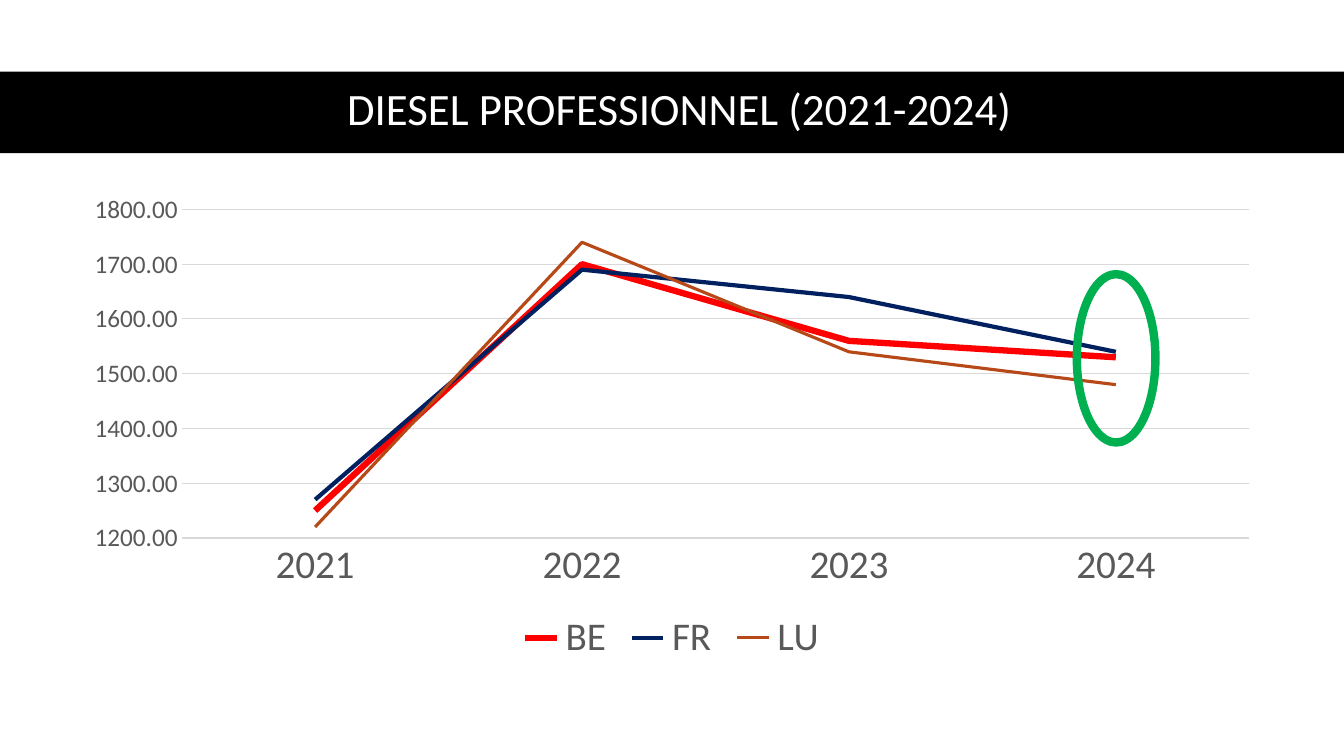
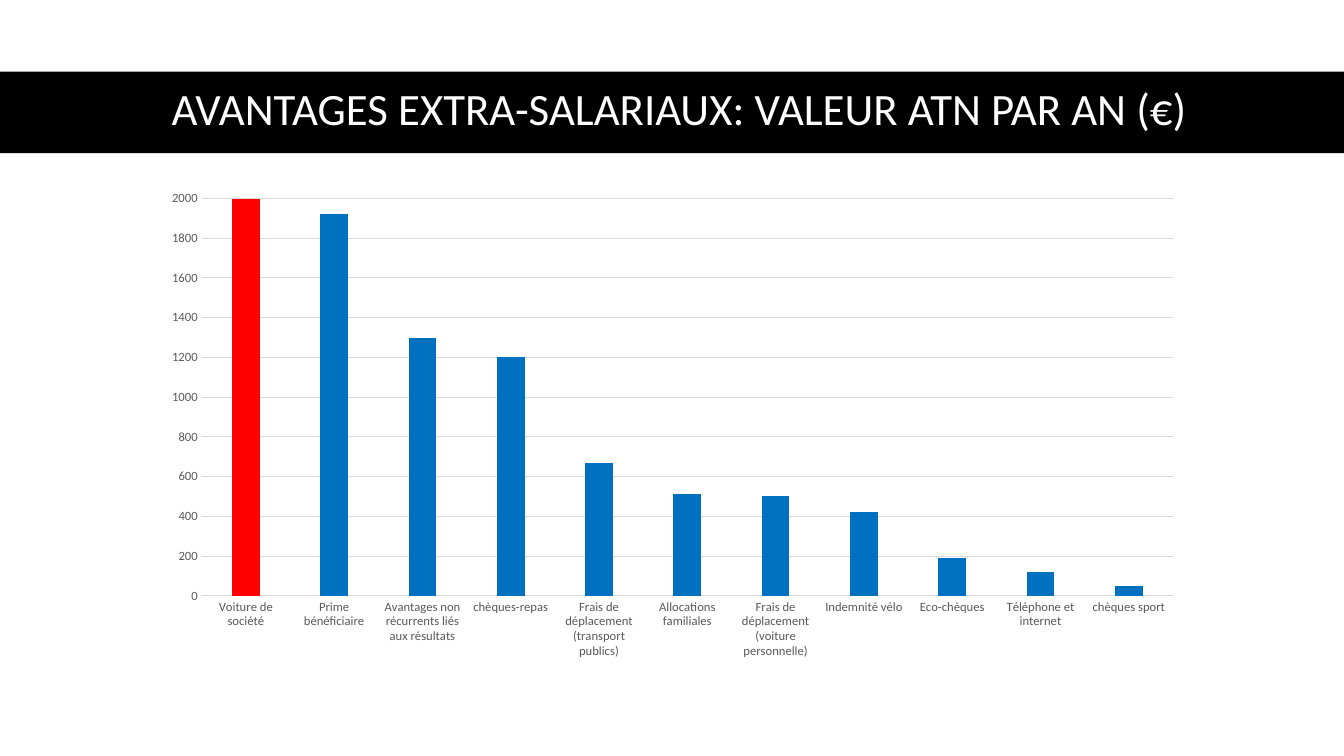
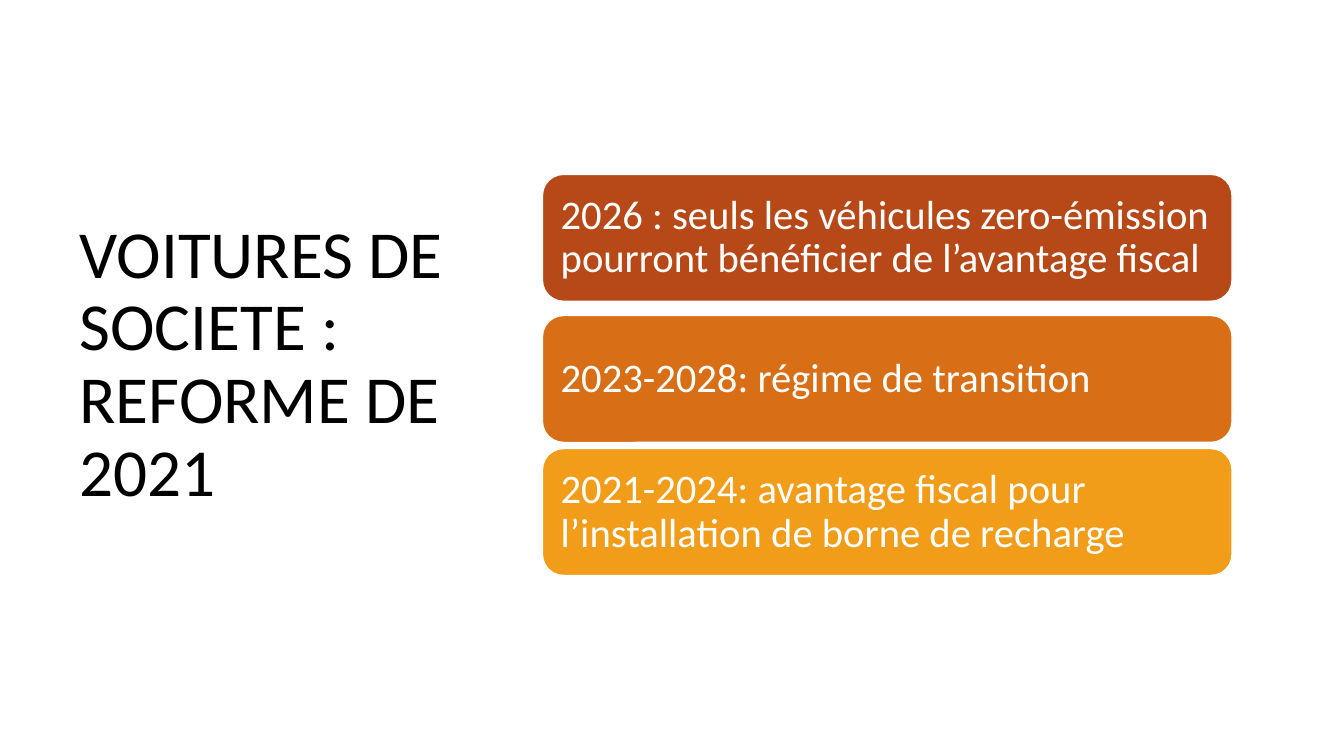
from pptx import Presentation
from pptx.chart.data import CategoryChartData
from pptx.dml.color import RGBColor
from pptx.enum.chart import XL_CHART_TYPE, XL_LEGEND_POSITION, XL_TICK_MARK
from pptx.enum.shapes import MSO_SHAPE
from pptx.enum.text import MSO_ANCHOR, PP_ALIGN
from pptx.util import Pt

PX = 9144  # EMU per px, 100 px to the inch
FONT = "Calibri"
COLORS = {
    "white": "FFFFFF", "black": "000000", "grey": "595959", "grid": "D9D9D9",
    "red": "FF0000", "navy": "002060", "rust": "B74919", "green": "00B050",
    "blue": "0070C0", "orange": "D86E15", "amber": "F19D19",
}

DIESEL_YEARS = ["2021", "2022", "2023", "2024"]
DIESEL_PRICES = [  # country, prices, colour, line width
    ("BE", [1250, 1700, 1560, 1530], "red", 4.5),
    ("FR", [1270, 1690, 1640, 1540], "navy", 3),
    ("LU", [1220, 1740, 1540, 1480], "rust", 2.25),
]
BENEFITS = {
    "Voiture de société": 2010,
    "Prime bénéficiaire": 1920,
    "Avantages non récurrents liés aux résultats": 1300,
    "chèques-repas": 1200,
    "Frais de déplacement (transport publics)": 670,
    "Allocations familiales": 510,
    "Frais de déplacement (voiture personnelle)": 500,
    "Indemnité vélo": 420,
    "Eco-chèques": 190,
    "Téléphone et internet": 120,
    "chèques sport": 50,
}
REFORM_STEPS = [  # top, colour, text
    (173, "rust", "2026 : seuls les véhicules zero-émission pourront "
                  "bénéficier de l’avantage fiscal"),
    (313, "orange", "2023-2028: régime de transition"),
    (445, "amber", "2021-2024: avantage fiscal pour l’installation de "
                   "borne de recharge"),
]


def rgb(name):
    return RGBColor.from_string(COLORS[name])


def emu(box):
    return [n * PX for n in box]


def set_font(font, size, color):
    font.name, font.size = FONT, Pt(size)
    font.color.rgb = rgb(color)


def set_line(line, color, width):
    line.color.rgb = rgb(color)
    line.width = Pt(width)


def write(sp, text, size, color, align=PP_ALIGN.LEFT, inset=None):
    tf = sp.text_frame
    tf.word_wrap = True
    tf.vertical_anchor = MSO_ANCHOR.MIDDLE
    if inset is not None:
        tf.margin_left = tf.margin_right = inset * PX
        tf.margin_top = tf.margin_bottom = inset * PX
    p = tf.paragraphs[0]
    p.alignment, p.line_spacing = align, 0.9
    r = p.add_run()
    r.text = text
    set_font(r.font, size, color)


def add_text(s, box, text, size, color, align=PP_ALIGN.LEFT):
    write(s.shapes.add_textbox(*emu(box)), text, size, color, align)


def add_shape(s, kind, box, fill=None, line=None, width=1):
    sp = s.shapes.add_shape(kind, *emu(box))
    sp.shadow.inherit = False
    if fill:
        sp.fill.solid()
        sp.fill.fore_color.rgb = rgb(fill)
    else:
        sp.fill.background()
    if line:
        set_line(sp.line, line, width)
    else:
        sp.line.fill.background()
    return sp


def add_title_band(s, title):
    add_shape(s, MSO_SHAPE.RECTANGLE, (0, 71, 1333, 81), "black")
    add_text(s, (61, 70, 1226, 81), title, 32, "white", PP_ALIGN.CENTER)


def add_chart(s, box, kind, categories, series, cat_size, val_size, limits, step):
    """Place a chart with grey labels, light gridlines and no tick marks."""
    data = CategoryChartData()
    data.categories = categories
    for name, values in series:
        data.add_series(name, values)
    chart = s.shapes.add_chart(kind, *emu(box), data).chart
    set_font(chart.font, 10, "black")
    chart.has_title = chart.has_legend = False
    chart.plots[0].vary_by_categories = False
    cat, val = chart.category_axis, chart.value_axis
    for axis, size in ((cat, cat_size), (val, val_size)):
        axis.major_tick_mark = axis.minor_tick_mark = XL_TICK_MARK.NONE
        set_font(axis.tick_labels.font, size, "grey")
    set_line(cat.format.line, "grid", 0.75)
    val.format.line.fill.background()
    val.has_major_gridlines = True
    set_line(val.major_gridlines.format.line, "grid", 0.75)
    val.minimum_scale, val.maximum_scale = limits
    val.major_unit = step
    return chart


def diesel_slide(s):
    add_title_band(s, "DIESEL PROFESSIONNEL (2021-2024)")
    chart = add_chart(s, (70, 183, 1193, 481), XL_CHART_TYPE.LINE, DIESEL_YEARS,
                      [row[:2] for row in DIESEL_PRICES], 28, 18, (1200, 1800), 100)
    labels = chart.value_axis.tick_labels
    labels.number_format, labels.number_format_is_linked = "0.00", False
    for series, (_, _, color, width) in zip(chart.plots[0].series, DIESEL_PRICES):
        series.smooth = False
        set_line(series.format.line, color, width)
    chart.has_legend = True
    chart.legend.position = XL_LEGEND_POSITION.BOTTOM
    chart.legend.include_in_layout = False
    set_font(chart.legend.font, 28, "grey")
    add_shape(s, MSO_SHAPE.OVAL, (1068, 272, 78, 167), line="green", width=6)


def benefits_slide(s):
    add_title_band(s, "AVANTAGES EXTRA-SALARIAUX: VALEUR ATN PAR AN (€)")
    chart = add_chart(s, (150, 180, 1034, 483), XL_CHART_TYPE.COLUMN_CLUSTERED,
                      list(BENEFITS), [("Series 1", list(BENEFITS.values()))],
                      9, 9, (0, 2000), 200)
    plot = chart.plots[0]
    plot.gap_width, plot.overlap = 219, -27
    bars = plot.series[0]
    bars.invert_if_negative = False
    for part, color in ((bars, "blue"), (bars.points[0], "red")):
        part.format.fill.solid()
        part.format.fill.fore_color.rgb = rgb(color)


def reform_slide(s):
    add_text(s, (69, 54, 459, 617), "VOITURES DE SOCIETE : REFORME DE 2021",
             48, "black")
    for top, color, text in REFORM_STEPS:
        sp = add_shape(s, MSO_SHAPE.ROUNDED_RECTANGLE, (538, top, 684, 126),
                       color, "white")
        write(sp, text, 29, "white", inset=12)


def main():
    prs = Presentation()
    prs.slide_width, prs.slide_height = emu((1333, 750))
    for build in (diesel_slide, benefits_slide, reform_slide):
        build(prs.slides.add_slide(prs.slide_layouts[6]))
    prs.save("out.pptx")


if __name__ == "__main__":
    main()
